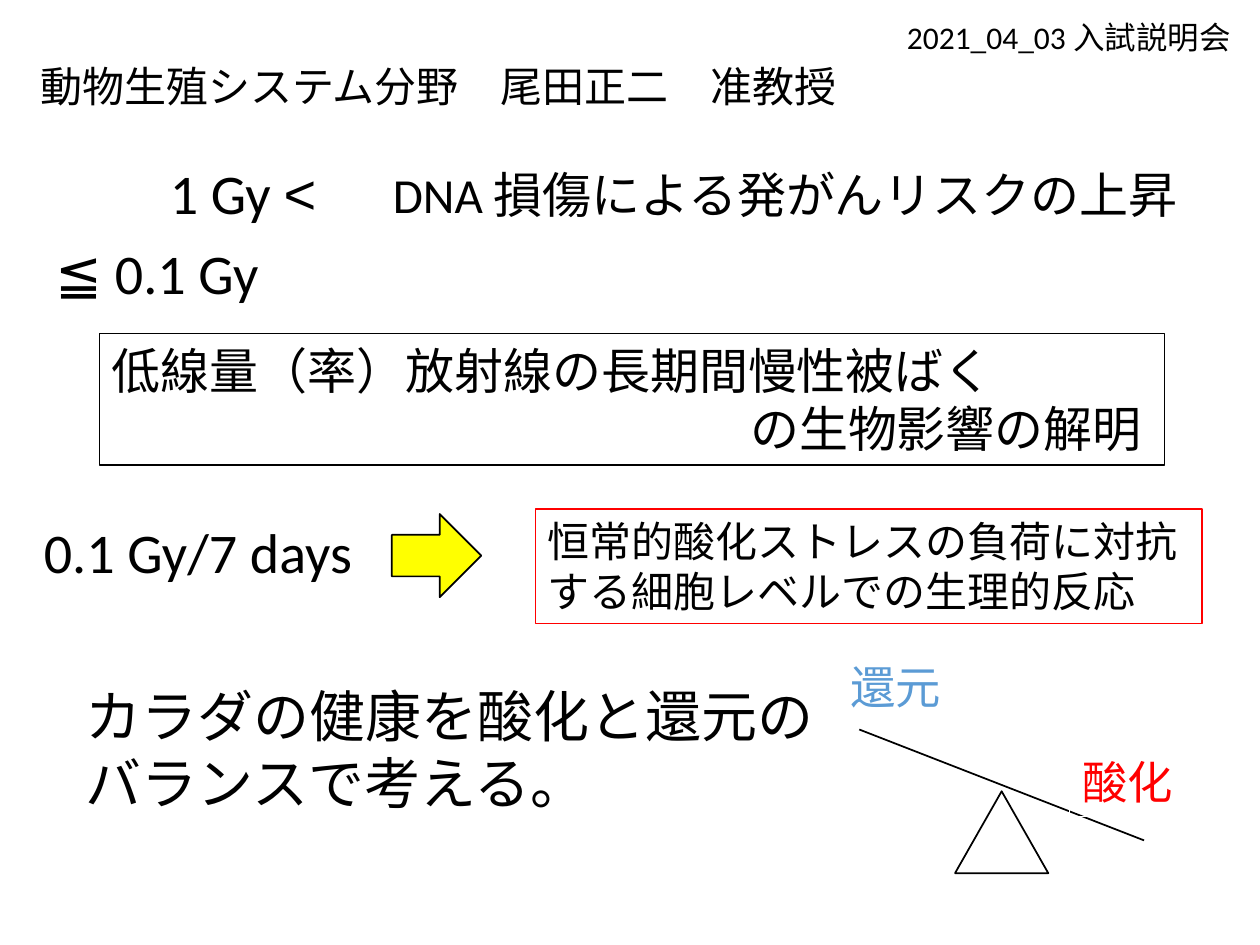
from pptx import Presentation
from pptx.dml.color import RGBColor
from pptx.enum.shapes import MSO_CONNECTOR, MSO_SHAPE as SHAPE
from pptx.enum.text import PP_ALIGN as ALIGN
from pptx.util import Inches, Pt
from lxml.etree import SubElement
from pptx.oxml.ns import qn

BLACK, WHITE, RED = "000000", "FFFFFF", "FF0000"
BLUE, YELLOW = "5B9BD5", "FFFF00"

# Each text: (box, lines, format)
TEXTS = [
    ((0.79, 2.65, 8.45, 1.04),
     ["低線量（率）放射線の長期間慢性被ばく", "の生物影響の解明"],
     dict(size=28, line=BLACK, last=ALIGN.RIGHT, right=0.18)),
    ((1.25, 1.21, 1.5, 0.64), [[("1 Gy ", "Calibri"), ("<", "Arial")]], dict(size=32)),
    ((3.02, 1.26, 6.51, 0.57), ["DNA 損傷による発がんリスクの上昇"], dict(size=28)),
    ((0.34, 1.84, 2.01, 0.64), ["≦ 0.1 Gy"], dict(size=32)),
    ((0.25, 4.06, 2.78, 0.64), ["0.1 Gy/7 days"], dict(size=32)),
    ((4.25, 4.04, 5.29, 0.91),
     ["恒常的酸化ストレスの負荷に対抗する細胞レベルでの生理的反応"],
     dict(size=24, fill=WHITE, line=RED)),
    ((0.58, 5.36, 6.04, 1.18),
     ["カラダの健康を酸化と還元の", "バランスで考える。"], dict(size=32)),
    ((0.22, 0.43, 6.6, 0.5), ["動物生殖システム分野　尾田正二　准教授"], dict(size=24)),
    ((7.1, 0.09, 2.8, 0.4), ["2021_04_03 入試説明会"], dict(size=18)),
]
LABELS = [
    ((6.65, 5.18, 0.93, 0.54), "還元", BLUE),
    ((8.49, 5.94, 0.93, 0.54), "酸化", RED),
]
ARROW = (3.11, 4.08, 0.71, 0.66)
PIVOT = (7.58, 6.28, 0.74, 0.65)
LEVER = (6.82, 5.79, 9.08, 6.67)

deck = Presentation()
deck.slide_width, deck.slide_height = Inches(10), Inches(7.5)
slide = deck.slides.add_slide(deck.slide_layouts[6])
shapes = slide.shapes


def rgb(code):
    return RGBColor.from_string(code)


def inches(nums):
    return [Inches(n) for n in nums]


def add_text(box, lines, size, color=BLACK, fill=None, line=None,
             last=ALIGN.LEFT, right=0.1, wrap=True):
    """Add a text box; a line is a string or a list of (text, font) runs."""
    shape = shapes.add_textbox(*inches(box))
    if fill:
        shape.fill.solid()
        shape.fill.fore_color.rgb = rgb(fill)
    if line:
        shape.line.color.rgb = rgb(line)
        shape.line.width = Pt(0.75)
    frame = shape.text_frame
    frame.word_wrap = wrap
    frame.margin_right = Inches(right)
    for i, runs in enumerate(lines):
        para = frame.add_paragraph() if i else frame.paragraphs[0]
        para.alignment = last if i else ALIGN.LEFT
        if isinstance(runs, str):
            runs = [(runs, "Calibri")]
        for text, name in runs:
            run = para.add_run()
            run.text = text
            run.font.name, run.font.size = name, Pt(size)
            run.font.color.rgb = rgb(color)


def add_solid(kind, box, fill):
    shape = shapes.add_shape(kind, *inches(box))
    shape.shadow.inherit = False
    shape.fill.solid()
    shape.fill.fore_color.rgb = rgb(fill)
    shape.line.color.rgb = rgb(BLACK)
    shape.line.width = Pt(1)


for box, lines, style in TEXTS:
    add_text(box, lines, **style)

add_solid(SHAPE.RIGHT_ARROW, ARROW, YELLOW)
add_solid(SHAPE.ISOSCELES_TRIANGLE, PIVOT, WHITE)

lever = shapes.add_connector(MSO_CONNECTOR.STRAIGHT, *inches(LEVER))
lever.line.color.rgb = rgb(BLACK)
lever.line.width = Pt(1)
SubElement(lever._element.spPr, qn("a:effectLst"))

for box, word, color in LABELS:
    add_text(box, [word], size=25.9, color=color, line=WHITE, wrap=False)

deck.save("out.pptx")
